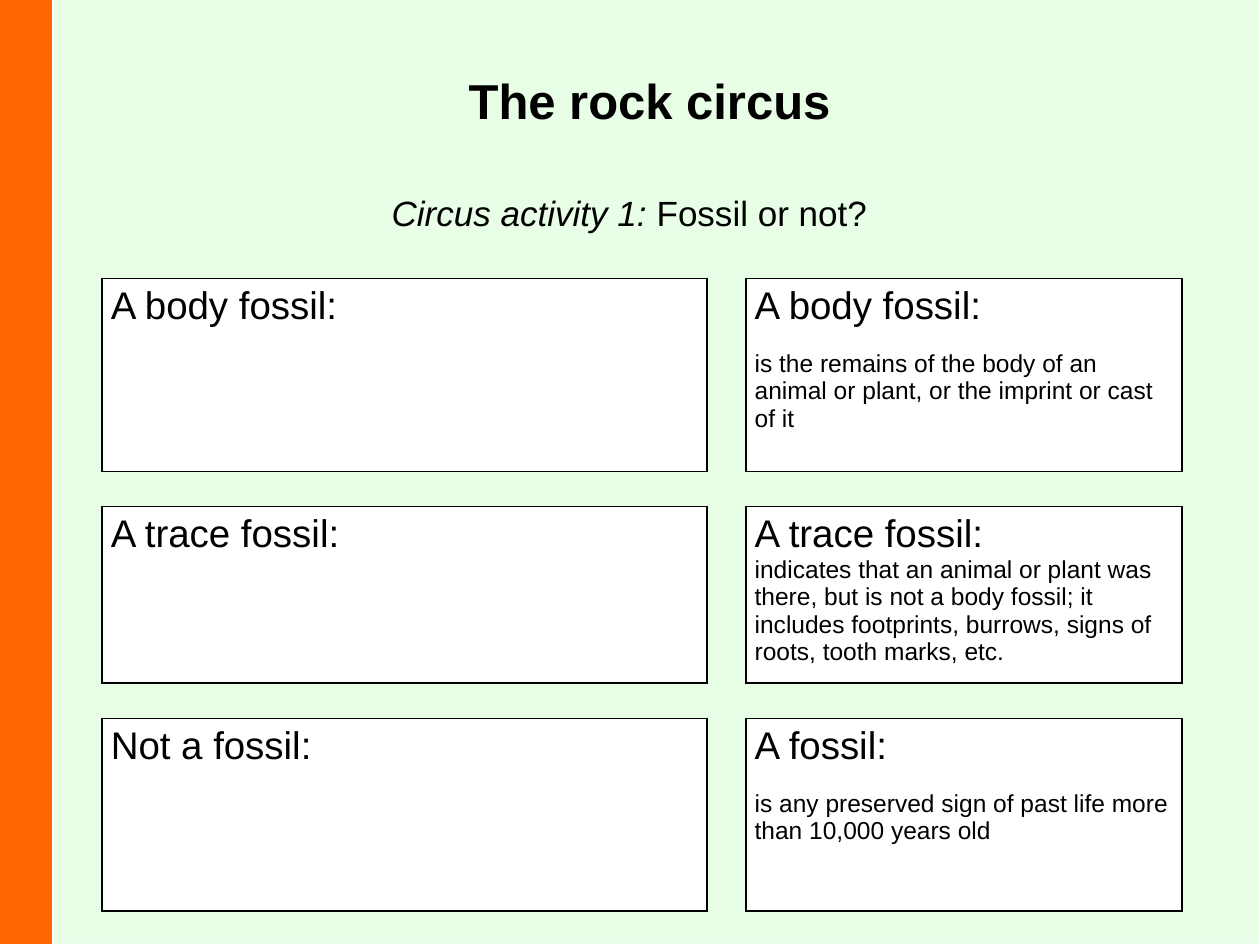
from dataclasses import dataclass
from typing import NamedTuple

from lxml import etree
from pptx import Presentation
from pptx.dml.color import RGBColor
from pptx.enum.shapes import MSO_SHAPE
from pptx.enum.text import MSO_ANCHOR, PP_ALIGN
from pptx.oxml.ns import qn
from pptx.util import Inches, Pt

RECTANGLE = MSO_SHAPE.RECTANGLE
TOP = MSO_ANCHOR.TOP
CENTER, LEFT = PP_ALIGN.CENTER, PP_ALIGN.LEFT
WIDTH, HEIGHT = Inches(10), Inches(7.5)
TITLE_ONLY = 5
FONT = "Arial"
COLORS = {"panel": "E9FEE6", "band": "FF6600", "box": "FFFFFF", "ink": "000000"}
COLUMN_SHARES = (48, 3.1, 34.6)
ROW_SHARES = (20.4, 3.73, 18.7, 3.73, 20.4)
BORDER_WIDTH = Pt(0.96)


class Area(NamedTuple):
    """A rectangle in percent of the slide's width and height."""

    left: float
    top: float
    width: float
    height: float

    def lengths(self) -> tuple:
        """Return left, top, width and height as lengths."""
        return tuple(
            round(side * share / 100)
            for side, share in zip((WIDTH, HEIGHT) * 2, self)
        )


@dataclass
class FossilRow:
    """A box to fill in and the definition beside it."""

    prompt: str
    term: str
    definition: str
    gap: float = 0


FOSSIL_ROWS = (
    FossilRow("A body fossil:", "A body fossil:",
              "is the remains of the body of an animal or plant, "
              "or the imprint or cast of it", gap=12.65),
    FossilRow("A trace fossil:", "A trace fossil:",
              "indicates that an animal or plant was there, but is not a body fossil; "
              "it includes footprints, burrows, signs of roots, tooth marks, etc."),
    FossilRow("Not a fossil:", "A fossil:",
              "is any preserved sign of past life more than 10,000 years old", gap=12.65),
)


def add_text(paragraph, text: str, *, size: float, bold=False, italic=False,
             align=LEFT, before: float = 0) -> None:
    """Append a formatted run to a paragraph."""
    paragraph.alignment = align
    paragraph.space_before = Pt(before)
    run = paragraph.add_run()
    run.text = text
    font = run.font
    font.name, font.size, font.bold, font.italic = FONT, Pt(size), bold, italic
    font.color.rgb = RGBColor.from_string(COLORS["ink"])


def add_panel(slide, area: Area, color: str, outlined: bool = False) -> None:
    """Draw a plain rectangle behind the content."""
    shape = slide.shapes.add_shape(RECTANGLE, *area.lengths())
    shape.shadow.inherit = False
    shape.fill.solid()
    shape.fill.fore_color.rgb = RGBColor.from_string(COLORS[color])
    if outlined:
        shape.line.color.rgb = RGBColor.from_string(COLORS[color])
        shape.line.width = Pt(0.75)
    else:
        shape.line.fill.background()


def place_text(shape, area: Area, top_inset: float = 0.05):
    """Position a text shape and return its first paragraph."""
    shape.left, shape.top, shape.width, shape.height = area.lengths()
    frame = shape.text_frame
    frame.word_wrap = True
    frame.vertical_anchor = TOP
    frame.margin_top = Inches(top_inset)
    return frame.paragraphs[0]


def set_border(cell, side: str, visible: bool) -> None:
    """Draw or hide one edge of a table cell."""
    properties = cell._tc.get_or_add_tcPr()
    line = etree.SubElement(properties, qn(f"a:ln{side}"), w=str(int(BORDER_WIDTH)))
    if visible:
        fill = etree.SubElement(line, qn("a:solidFill"))
        etree.SubElement(fill, qn("a:srgbClr"), val=COLORS["ink"])
    else:
        etree.SubElement(line, qn("a:noFill"))


def format_cell(cell, row: int, column: int) -> None:
    """Style a box or the gap between boxes."""
    for side in "LRTB":
        set_border(cell, side, (row if side in "LR" else column) % 2 == 0)
    cell.margin_left = cell.margin_right = Inches(0.07)
    if row % 2 or column % 2:
        cell.fill.background()
        paragraph = cell.text_frame.paragraphs[0]
        etree.SubElement(paragraph._p, qn("a:endParaRPr"), sz="800")
    else:
        cell.fill.solid()
        cell.fill.fore_color.rgb = RGBColor.from_string(COLORS["box"])


def add_fossil_table(slide) -> None:
    """Add the grid of prompts and definitions."""
    area = Area(8.1, 29.47, sum(COLUMN_SHARES), sum(ROW_SHARES))
    table = slide.shapes.add_table(
        len(ROW_SHARES), len(COLUMN_SHARES), *area.lengths()).table
    table.first_row = table.horz_banding = False
    for column, share in zip(table.columns, COLUMN_SHARES):
        column.width = round(WIDTH * share / 100)
    for row, share in zip(table.rows, ROW_SHARES):
        row.height = round(HEIGHT * share / 100)
    for row in range(len(ROW_SHARES)):
        for column in range(len(COLUMN_SHARES)):
            format_cell(table.cell(row, column), row, column)
    for index, fossil in enumerate(FOSSIL_ROWS):
        prompt_frame = table.cell(2 * index, 0).text_frame
        term_frame = table.cell(2 * index, 2).text_frame
        add_text(prompt_frame.paragraphs[0], fossil.prompt, size=22)
        add_text(term_frame.paragraphs[0], fossil.term, size=22)
        add_text(term_frame.add_paragraph(), fossil.definition,
                 size=14, before=fossil.gap)


def main() -> None:
    """Build and save the slide."""
    presentation = Presentation()
    presentation.slide_width, presentation.slide_height = WIDTH, HEIGHT
    slide = presentation.slides.add_slide(presentation.slide_layouts[TITLE_ONLY])
    add_panel(slide, Area(4.3, 0, 95.6, 99.87), "panel")
    add_panel(slide, Area(0, 0, 4.1, 99.87), "band", outlined=True)

    title = slide.shapes.title
    slide.shapes._spTree.append(title._element)
    heading = place_text(title, Area(11.8, 6.27, 79.5, 7.07), top_inset=0.09)
    add_text(heading, "The rock circus", size=28, bold=True, align=CENTER)

    subtitle_area = Area(9.4, 19.6, 81.1, 5.73)
    subtitle = slide.shapes.add_textbox(*subtitle_area.lengths())
    activity = place_text(subtitle, subtitle_area)
    add_text(activity, "Circus activity 1:", size=20, italic=True, align=CENTER)
    add_text(activity, " Fossil or not?", size=20, align=CENTER)

    add_fossil_table(slide)
    presentation.save("out.pptx")


if __name__ == "__main__":
    main()
